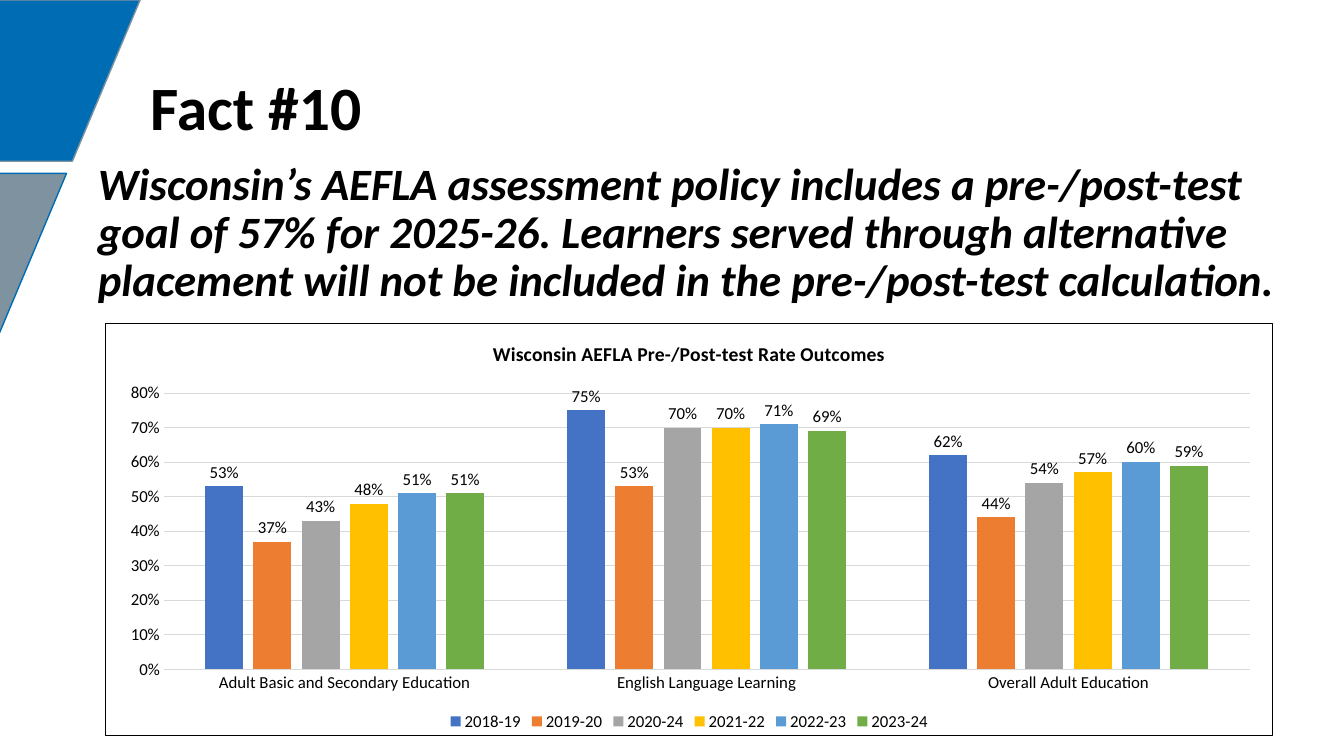
from lxml.etree import SubElement as Sub
from pptx import Presentation
from pptx.chart.data import CategoryChartData as ChartData
from pptx.dml.color import RGBColor as RGB
from pptx.enum.chart import XL_CHART_TYPE as Kind, XL_LABEL_POSITION as Spot
from pptx.enum.chart import XL_LEGEND_POSITION as Side, XL_TICK_MARK as Tick
from pptx.enum.shapes import MSO_SHAPE as Shape
from pptx.enum.text import MSO_ANCHOR as Anchor, MSO_AUTO_SIZE as Fit
from pptx.oxml.ns import qn
from pptx.util import Inches, Pt

# Content
TITLE = "Fact #10"
BODY = ("Wisconsin’s AEFLA assessment policy includes a pre-/post-test goal of 57% "
        "for 2025-26. Learners served through alternative placement will not be "
        "included in the pre-/post-test calculation.")
HEAD = "Wisconsin AEFLA Pre-/Post-test Rate Outcomes"
GROUPS = ["Adult Basic and Secondary Education", "English Language Learning",
          "Overall Adult Education"]
RATES = {
    "2018-19": (0.53, 0.75, 0.62),
    "2019-20": (0.37, 0.53, 0.44),
    "2020-24": (0.43, 0.70, 0.54),
    "2021-22": (0.48, 0.70, 0.57),
    "2022-23": (0.51, 0.71, 0.60),
    "2023-24": (0.51, 0.69, 0.59),
}


class Theme:
    face = "Calibri"
    ink, grid, blue, slate = "000000", "D9D9D9", "006CB3", "7E929F"
    bars = ["4472C4", "ED7D31", "A5A5A5", "FFC000", "5B9BD5", "70AD47"]
    title, body, head, label = 44, 32, 14, 12


# Left, top, width, height in inches
TITLE_BOX = (1.39, 0.61, 9.22, 0.98)
BODY_BOX = (0.87, 1.55, 11.92, 2.52)
CHART_BOX = (1.04, 3.2, 11.59, 4.1)
BANDS = [((-1.97, 0, 3.36, 1.6), Theme.blue, Theme.slate),
         ((-2.7, 1.72, 3.36, 1.6), Theme.slate, Theme.blue)]
# Share of the chart taken by the plot
PLOT = {"x": 0.05, "y": 0.17, "w": 0.93, "h": 0.67}


def put(obj, **vals):
    for name, val in vals.items():
        setattr(obj, name, val)


def style(font, size, **more):
    put(font, name=Theme.face, size=Pt(size), **more)
    font.color.rgb = RGB.from_string(Theme.ink)


def stroke(line, color, width):
    line.color.rgb = RGB.from_string(color)
    line.width = Pt(width)


def paint(fill, color):
    fill.solid()
    fill.fore_color.rgb = RGB.from_string(color)


def write(holder, box, text, size, anchor, **more):
    put(holder, **dict(zip(("left", "top", "width", "height"), map(Inches, box))))
    frame = holder.text_frame
    put(frame, text=text, word_wrap=True, auto_size=Fit.NONE, vertical_anchor=anchor)
    para = frame.paragraphs[0]
    props = para._p.get_or_add_pPr()
    put_xml = {"marL": "0", "indent": "0"}
    for name, val in put_xml.items():
        props.set(name, val)
    Sub(props, qn("a:buNone"))
    put(para, line_spacing=0.9, space_before=Pt(0))
    style(para.runs[0].font, size, bold=True, **more)


deck = Presentation()
put(deck, slide_width=Inches(13.33), slide_height=Inches(7.5))
slide = deck.slides.add_slide(deck.slide_layouts[1])

# Corner bands
for box, color, edge in BANDS:
    band = slide.shapes.add_shape(Shape.FLOWCHART_DATA, *map(Inches, box))
    band.shadow.inherit = False
    paint(band.fill, color)
    stroke(band.line, edge, 1)

# Title and statement
title, body = slide.placeholders
write(title, TITLE_BOX, TITLE, Theme.title, Anchor.MIDDLE)
title.text_frame.paragraphs[0].alignment = 1
write(body, BODY_BOX, BODY, Theme.body, Anchor.TOP, italic=True)

# Chart
data = ChartData(number_format="0%")
data.categories = GROUPS
for year, vals in RATES.items():
    data.add_series(year, vals)
chart = slide.shapes.add_chart(Kind.COLUMN_CLUSTERED, *map(Inches, CHART_BOX), data).chart
style(chart.font, Theme.label)
put(chart, has_title=True, has_legend=True)
chart.chart_title.text_frame.text = HEAD
style(chart.chart_title.text_frame.paragraphs[0].runs[0].font, Theme.head, bold=True)
put(chart.legend, position=Side.BOTTOM, include_in_layout=False)
style(chart.legend.font, Theme.label)

# Bars
plot = chart.plots[0]
put(plot, gap_width=219, overlap=-27, vary_by_categories=False)
for bar, color in zip(plot.series, Theme.bars):
    paint(bar.format.fill, color)
    put(bar.data_labels, show_value=True, position=Spot.OUTSIDE_END,
        number_format="0%", number_format_is_linked=False)
    style(bar.data_labels.font, Theme.label)

# Axes
cats, rates = chart.category_axis, chart.value_axis
for axis in (cats, rates):
    put(axis, major_tick_mark=Tick.NONE, minor_tick_mark=Tick.NONE)
    style(axis.tick_labels.font, Theme.label)
put(rates, minimum_scale=0, maximum_scale=0.8, major_unit=0.1, has_major_gridlines=True)
put(rates.tick_labels, number_format="0%", number_format_is_linked=False)
stroke(cats.format.line, Theme.grid, 0.75)
stroke(rates.major_gridlines.format.line, Theme.grid, 0.75)
rates.format.line.fill.background()

# Plot place
area = chart._chartSpace.chart.plotArea
for old in area.findall(qn("c:layout")):
    area.remove(old)
layout = Sub(area, qn("c:layout"))
area.insert(0, layout)
manual = Sub(layout, qn("c:manualLayout"))
Sub(manual, qn("c:layoutTarget"), val="inner")
for key in "xy":
    Sub(manual, qn(f"c:{key}Mode"), val="edge")
for key, val in PLOT.items():
    Sub(manual, qn(f"c:{key}"), val=str(val))

# Chart border
space = chart._chartSpace
frame = Sub(space, qn("c:spPr"))
space.chart.addnext(frame)
line = Sub(frame, qn("a:ln"), w=str(Pt(0.75)))
Sub(Sub(line, qn("a:solidFill")), qn("a:srgbClr"), val=Theme.ink)

deck.save("out.pptx")
